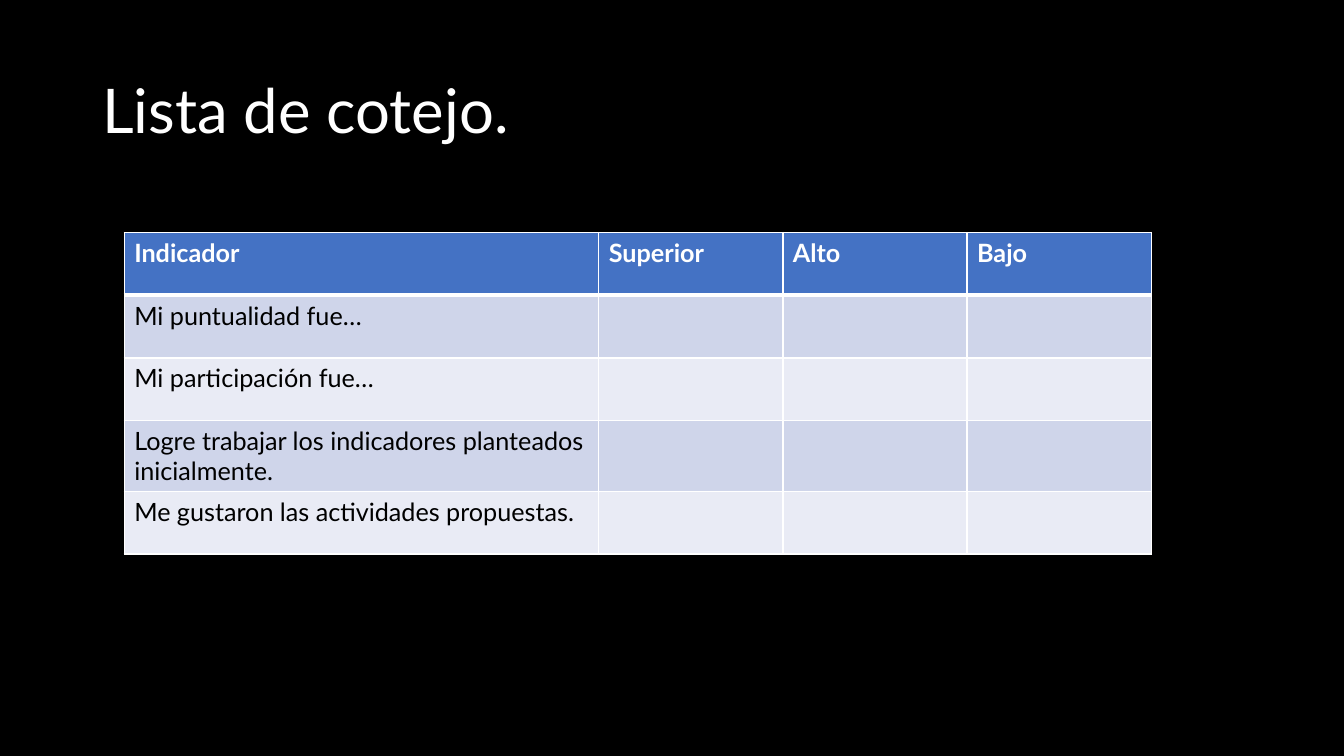
from dataclasses import dataclass

from lxml.etree import SubElement
from pptx import Presentation
from pptx.dml.color import RGBColor
from pptx.enum.text import MSO_ANCHOR
from pptx.oxml.ns import qn
from pptx.util import Cm, Pt

# Content
TITLE = "Lista de cotejo."
LEVELS = ["Superior", "Alto", "Bajo"]
INDICATORS = [
    "Mi puntualidad fue…",
    "Mi participación fue…",
    "Logre trabajar los indicadores planteados inicialmente.",
    "Me gustaron las actividades propuestas.",
]
CHECKLIST = [["Indicador", *LEVELS]] + [[item] + [""] * len(LEVELS) for item in INDICATORS]


@dataclass(frozen=True)
class Theme:
    font: str = "Lato"
    title_size: int = 44
    table_size: int = 18
    background: str = "000000"
    light: str = "FFFFFF"
    dark: str = "000000"
    header: str = "4472C4"
    bands: tuple = ("CFD5EA", "E9EBF5")
    thin: int = 1
    thick: int = 3


THEME = Theme()

# Layout
INDICATOR_WIDTH, LEVEL_WIDTH, ROW_HEIGHT = Cm(11.96), Cm(4.64), Cm(1.58)


def style_font(font, size, color, bold=False):
    font.name, font.size, font.bold = THEME.font, Pt(size), bold
    font.color.rgb = RGBColor.from_string(color)


def add_border(cell, side, width):
    line = SubElement(cell._tc.get_or_add_tcPr(), qn(f"a:ln{side}"), w=str(Pt(width)))
    fill = SubElement(line, qn("a:solidFill"))
    SubElement(fill, qn("a:srgbClr"), val=THEME.light)


def add_title(slide):
    title = slide.shapes.add_textbox(Cm(2.33), Cm(1.01), Cm(29.21), Cm(3.68)).text_frame
    title.word_wrap = True
    title.vertical_anchor = MSO_ANCHOR.MIDDLE
    title.text = TITLE
    title.paragraphs[0].line_spacing = 0.9
    style_font(title.paragraphs[0].runs[0].font, THEME.title_size, THEME.light)


def add_checklist(slide):
    widths = [INDICATOR_WIDTH] + [LEVEL_WIDTH] * len(LEVELS)
    checklist = slide.shapes.add_table(
        len(CHECKLIST), len(widths), Cm(3.13), Cm(5.86),
        sum(widths), ROW_HEIGHT * len(CHECKLIST),
    ).table
    for column, width in zip(checklist.columns, widths):
        column.width = width

    for row, entries in enumerate(CHECKLIST):
        checklist.rows[row].height = ROW_HEIGHT
        is_header = row == 0
        background = THEME.header if is_header else THEME.bands[(row - 1) % 2]
        # The thick rule lies between the header and the first indicator
        top = THEME.thick if row == 1 else THEME.thin
        bottom = THEME.thick if is_header else THEME.thin
        for column, entry in enumerate(entries):
            cell = checklist.cell(row, column)
            for side, width in zip("LRTB", (THEME.thin, THEME.thin, top, bottom)):
                add_border(cell, side, width)
            cell.fill.solid()
            cell.fill.fore_color.rgb = RGBColor.from_string(background)
            cell.text_frame.text = entry
            style_font(cell.text_frame.paragraphs[0].font, THEME.table_size,
                       THEME.light if is_header else THEME.dark, is_header)


def main():
    deck = Presentation()
    deck.slide_width, deck.slide_height = Cm(33.87), Cm(19.05)
    slide = deck.slides.add_slide(deck.slide_layouts[6])
    slide.background.fill.solid()
    slide.background.fill.fore_color.rgb = RGBColor.from_string(THEME.background)
    add_title(slide)
    add_checklist(slide)
    deck.save("out.pptx")


if __name__ == "__main__":
    main()
